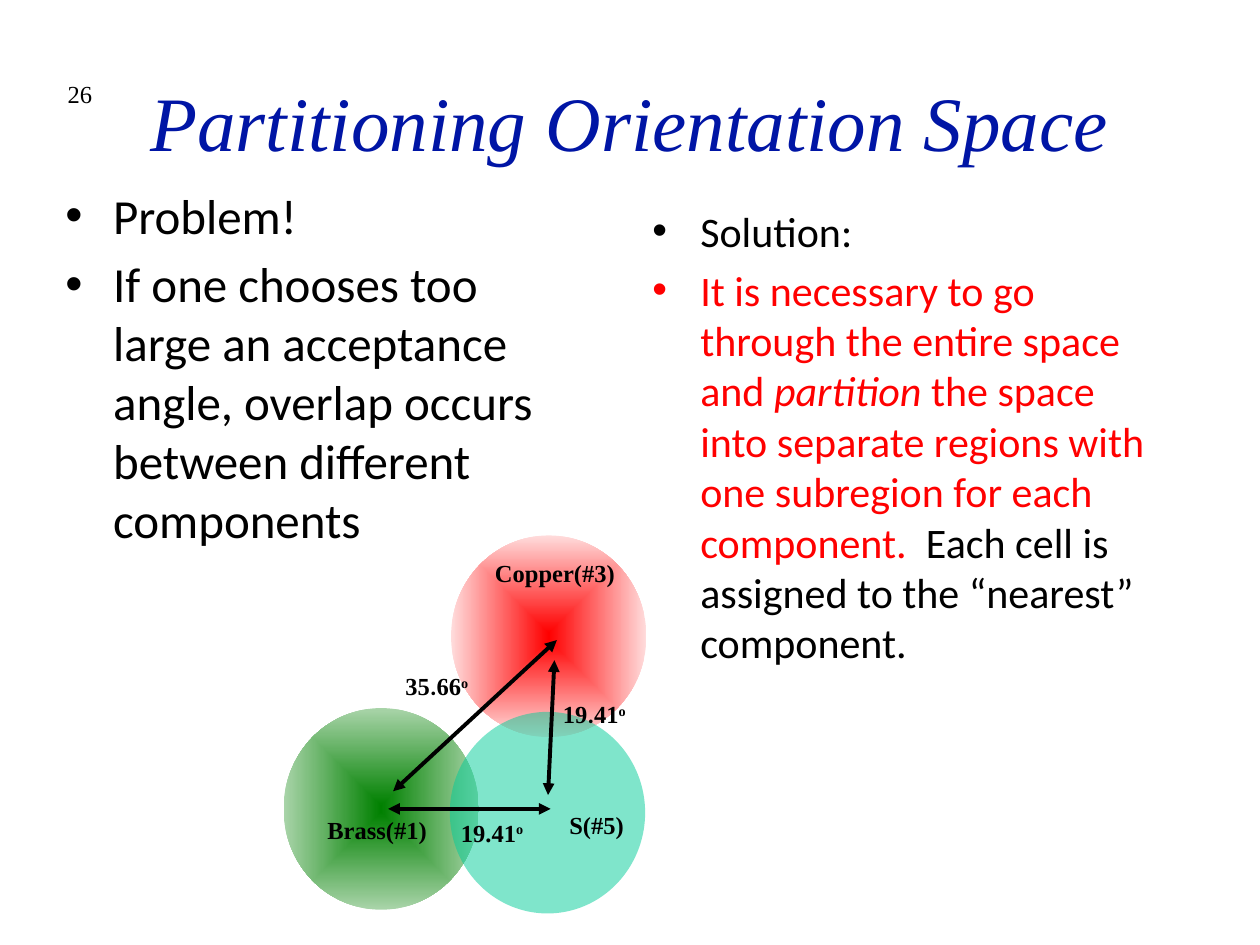
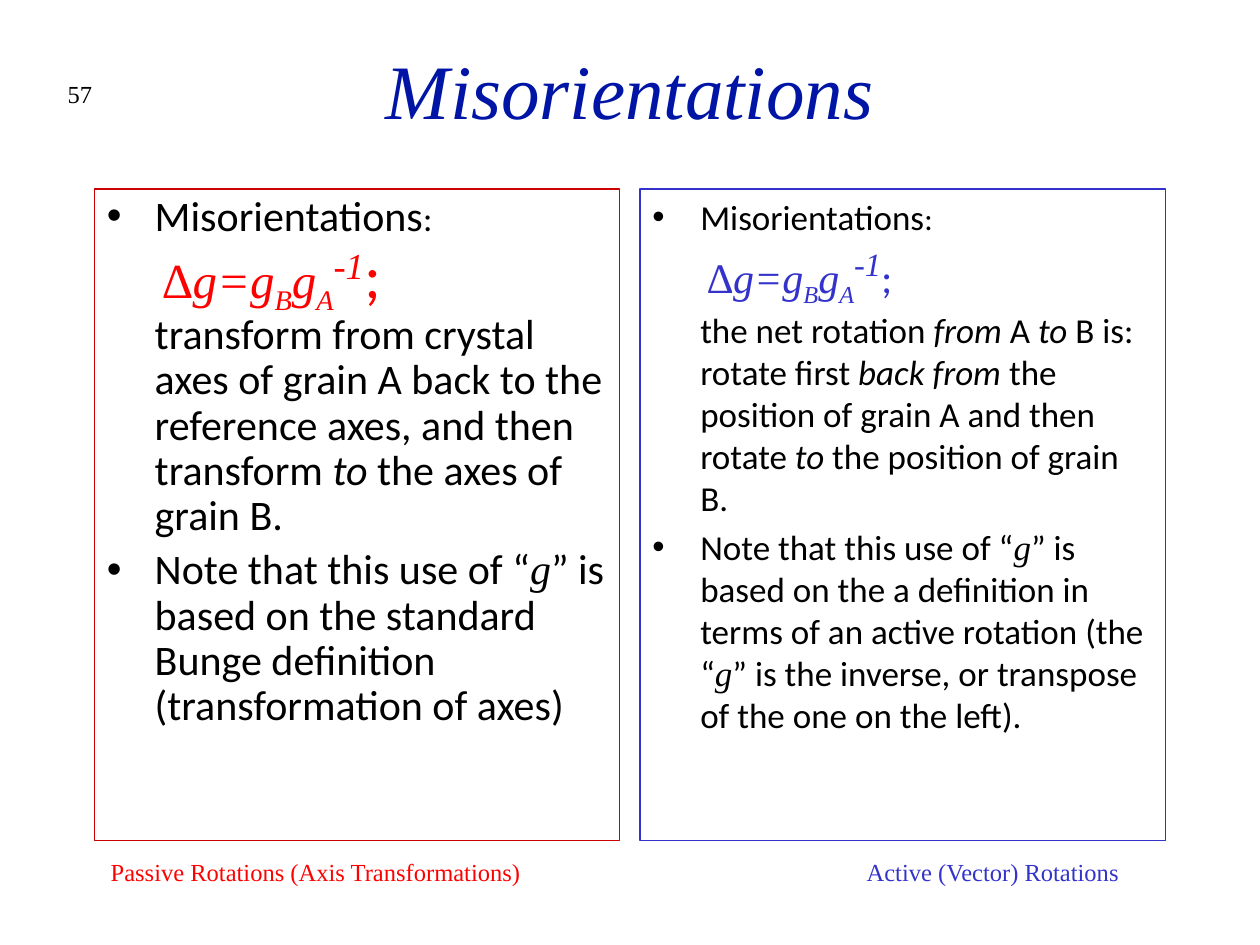
from lxml.etree import SubElement
from pptx import Presentation
from pptx.dml.color import RGBColor
from pptx.enum.shapes import MSO_CONNECTOR, MSO_SHAPE
from pptx.enum.text import MSO_ANCHOR, MSO_AUTO_SIZE, PP_ALIGN
from pptx.oxml.ns import qn
from pptx.util import Inches, Pt

BLACK = RGBColor(0x00, 0x00, 0x00)
RED = RGBColor(0xFF, 0x00, 0x00)
PINK = RGBColor(0xFF, 0xDC, 0xDC)
GREEN = RGBColor(0x00, 0x80, 0x00)
PALE_GREEN = RGBColor(0xA9, 0xD4, 0xA9)
TEAL = RGBColor(0x00, 0xCC, 0x99)
TITLE_BLUE = RGBColor(0x00, 0x15, 0xA5)
PASSIVE_BORDER = RGBColor(0xCC, 0x00, 0x00)
ACTIVE_BLUE = RGBColor(0x33, 0x33, 0xCC)
SERIF, SANS = "Times New Roman", "Calibri"

# Shared layout, in inches
COLUMN_WIDTH = 4.17
COLUMN_LEFTS = (0.75, 5.08)
PANEL_TOP, PANEL_HEIGHT = 1.5, 5.17
CIRCLE_WIDTH, CIRCLE_HEIGHT = 1.55, 1.6

# Run styles
ITALIC = {"italic": True}
VARIABLE = {"font": SERIF, "italic": True}
LABEL = {"font": SERIF, "size": 14, "bold": True}
DEGREE = ("o", {"baseline": 30})


def misorientation_formula(color, size, exponent_size, end_size, colon_size):
    """Runs of the formula, with the line breaks around it."""
    symbol = {**VARIABLE, "color": color, "size": size}
    subscript = {**symbol, "baseline": -25}
    return [
        (":\n ", {"size": colon_size}),
        ("∆g=g", symbol), ("B", subscript), ("g", symbol), ("A", subscript),
        ("-1", {**symbol, "size": exponent_size, "baseline": 30}),
        (";\n", {"color": color, "size": end_size}),
    ]


# Slide 1 content: bullets are lists of (text, style) runs
PROBLEM = [
    [("Problem!", {})],
    [("If one chooses too large an acceptance angle, overlap occurs "
      "between different components", {})],
]
SOLUTION = [
    [("Solution:", {})],
    [("It is necessary to go through the entire space and ", {"color": RED}),
     ("partition", {"color": RED, "italic": True}),
     (" the space into separate regions with one subregion for each component.",
      {"color": RED}),
     ("  Each cell is assigned to the “nearest” component.", {})],
]
# left, top, centre colour, edge colour (None: half transparent)
CIRCLES = [
    (2.25, 5.62, GREEN, PALE_GREEN),
    (3.58, 4.25, RED, PINK),
    (3.57, 5.65, TEAL, None),
]
ARROWS = [
    ((4.42, 5.08), (3.12, 6.28)),
    ((3.08, 6.42), (4.37, 6.42)),
    ((4.40, 5.24), (4.35, 6.31)),
]
POINT = (".", {"font": SANS})
# left, top, width, runs
LABELS = [
    (2.50, 6.42, 0.99, [("Brass(#1)", {})]),
    (3.83, 4.38, 1.15, [("Copper(#3)", {})]),
    (4.42, 6.38, 0.63, [("S(#5)", {})]),
    (3.12, 5.28, 0.73, [("35", {}), POINT, ("66", {}), DEGREE]),
    (4.37, 5.50, 0.73, [("19", {}), POINT, ("41", {}), DEGREE]),
    (3.56, 6.44, 0.72, [("19.41", {}), DEGREE]),
]

# Slide 2 content
PASSIVE = [
    [("Misorientations", {}),
     *misorientation_formula(RED, 28, 36, 36, 20),
     ("transform from crystal axes of grain A back to the reference axes, "
      "and then transform ", {}),
     ("to", ITALIC), (" the axes of grain B.", {})],
    [("Note that this use of “", {}), ("g", VARIABLE),
     ("” is based on the standard Bunge definition "
      "(transformation of axes)", {})],
]
ACTIVE = [
    [("Misorientations", {}),
     *misorientation_formula(ACTIVE_BLUE, 24, 32, 24, 18),
     ("the net rotation ", {}), ("from ", ITALIC), ("A ", {}), ("to ", ITALIC),
     ("B is: rotate first ", {}), ("back from ", ITALIC),
     ("the position of grain A and then rotate ", {}), ("to ", ITALIC),
     ("the position of grain B.", {})],
    [("Note that this use of “", {}), ("g", VARIABLE),
     ("” is based on the a definition in terms of an active rotation (the “", {}),
     ("g", VARIABLE),
     ("” is the inverse, or transpose of the one on the left).", {})],
]
# bullets, size, line spacing, border
PANELS = [
    (PASSIVE, 24, 0.9, PASSIVE_BORDER),
    (ACTIVE, 20, 1.0, ACTIVE_BLUE),
]
CAPTION = [
    ("Passive Rotations (Axis Transformations)\t", {"color": RED}),
    ("Active (Vector) Rotations", {"color": ACTIVE_BLUE}),
]


# Text
def add_runs(paragraph, runs, base):
    for text, style in runs:
        style = {**base, **style}
        for index, piece in enumerate(text.split("\n")):
            if index:
                paragraph.add_line_break()
            if not piece:
                continue
            run = paragraph.add_run()
            run.text = piece
            run.font.name = style["font"]
            run.font.size = Pt(style["size"])
            run.font.bold = style.get("bold", False)
            run.font.italic = style.get("italic", False)
            run.font.color.rgb = style.get("color", BLACK)
            if "baseline" in style:
                run._r.get_or_add_rPr().set("baseline", str(style["baseline"] * 1000))


def add_text_box(slide, left, top, width, height, wrap=True):
    box = slide.shapes.add_textbox(*map(Inches, (left, top, width, height)))
    box.text_frame.word_wrap = wrap
    if not wrap:
        box.text_frame.auto_size = MSO_AUTO_SIZE.SHAPE_TO_FIT_TEXT
    return box


def add_bullets(slide, left, top, height, bullets, size, line_spacing=1.0):
    box = add_text_box(slide, left, top, COLUMN_WIDTH, height)
    frame = box.text_frame
    for index, runs in enumerate(bullets):
        paragraph = frame.add_paragraph() if index else frame.paragraphs[0]
        paragraph.space_before = Pt(size * 0.2)
        paragraph.line_spacing = line_spacing
        properties = paragraph._p.get_or_add_pPr()
        properties.set("marL", str(Inches(0.38)))
        properties.set("indent", str(-Inches(0.38)))
        SubElement(properties, qn("a:buFont"), typeface="Arial")
        SubElement(properties, qn("a:buChar"), char="•")
        add_runs(paragraph, runs, {"font": SANS, "size": size})
    return box


def start_slide(presentation, number, title, title_top):
    slide = presentation.slides.add_slide(presentation.slide_layouts[6])
    number_box = add_text_box(slide, 0.25, 0.58, 0.58, 0.5)
    paragraph = number_box.text_frame.paragraphs[0]
    paragraph.alignment = PP_ALIGN.RIGHT
    add_runs(paragraph, [(number, {})], {"font": SERIF, "size": 14})

    title_box = add_text_box(slide, 0.75, title_top, 8.5, 1.25)
    title_box.text_frame.vertical_anchor = MSO_ANCHOR.MIDDLE
    paragraph = title_box.text_frame.paragraphs[0]
    paragraph.alignment = PP_ALIGN.CENTER
    add_runs(paragraph, [(title, {})],
             {**VARIABLE, "size": 44, "color": TITLE_BLUE})
    return slide


# Diagram parts
def add_circle(slide, left, top, centre, edge):
    circle = slide.shapes.add_shape(
        MSO_SHAPE.OVAL, *map(Inches, (left, top, CIRCLE_WIDTH, CIRCLE_HEIGHT)))
    circle.shadow.inherit = False
    circle.line.fill.background()
    if edge is None:
        circle.fill.solid()
        circle.fill.fore_color.rgb = centre
        color = circle._element.spPr.find(qn("a:solidFill"))[0]
        SubElement(color, qn("a:alpha"), val="50000")
        return
    circle.fill.gradient()
    for stop, color in zip(circle.fill.gradient_stops, (centre, edge)):
        stop.color.rgb = color
    # Spread the gradient outwards from the centre
    gradient = circle._element.spPr.find(qn("a:gradFill"))
    gradient.remove(gradient.find(qn("a:lin")))
    spread = SubElement(gradient, qn("a:path"))
    spread.set("path", "shape")
    SubElement(spread, qn("a:fillToRect"),
               {side: "50000" for side in ("l", "t", "r", "b")})


def add_double_arrow(slide, start, end):
    arrow = slide.shapes.add_connector(
        MSO_CONNECTOR.STRAIGHT, *map(Inches, (*start, *end)))
    arrow.line.color.rgb = BLACK
    arrow.line.width = Pt(2.25)
    line = arrow.line._get_or_add_ln()
    for tag in ("a:headEnd", "a:tailEnd"):
        SubElement(line, qn(tag), type="triangle")
    SubElement(arrow._element.spPr, qn("a:effectLst"))


# Slides
def build_partitioning(presentation):
    slide = start_slide(presentation, "26", "Partitioning Orientation Space", 0.33)
    add_bullets(slide, 0.42, 1.42, 4.5, PROBLEM, 28)
    add_bullets(slide, COLUMN_LEFTS[1], 1.58, 4.5, SOLUTION, 24)
    for circle in CIRCLES:
        add_circle(slide, *circle)
    for arrow in ARROWS:
        add_double_arrow(slide, *arrow)
    for left, top, width, runs in LABELS:
        label = add_text_box(slide, left, top, width, 0.33, wrap=False)
        add_runs(label.text_frame.paragraphs[0], runs, LABEL)


def build_misorientations(presentation):
    slide = start_slide(presentation, "57", "Misorientations", 0.08)
    for left, (bullets, size, spacing, border) in zip(COLUMN_LEFTS, PANELS):
        panel = add_bullets(slide, left, PANEL_TOP, PANEL_HEIGHT,
                            bullets, size, spacing)
        panel.line.color.rgb = border
        panel.line.width = Pt(0.75)

    caption = add_text_box(slide, 0.78, 6.75, 8.22, 0.33, wrap=False)
    paragraph = caption.text_frame.paragraphs[0]
    tabs = SubElement(paragraph._p.get_or_add_pPr(), qn("a:tabLst"))
    SubElement(tabs, qn("a:tab"), pos=str(Inches(6)), algn="l")
    add_runs(paragraph, CAPTION, {"font": SERIF, "size": 14})


def main():
    presentation = Presentation()
    presentation.slide_width = Inches(10)
    presentation.slide_height = Inches(7.5)
    build_partitioning(presentation)
    build_misorientations(presentation)
    presentation.save("out.pptx")


if __name__ == "__main__":
    main()
